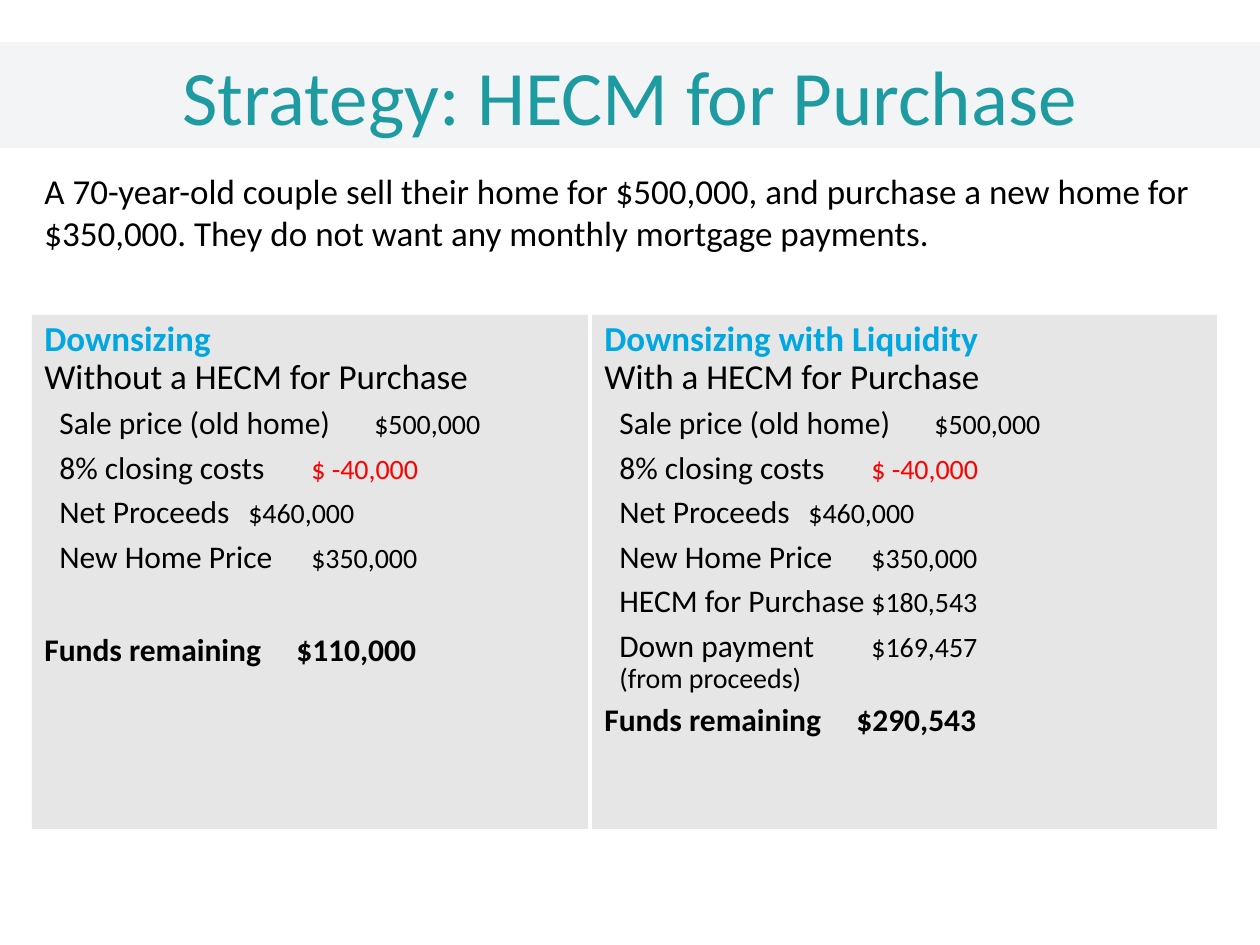
from dataclasses import dataclass

from lxml.etree import SubElement
from pptx import Presentation
from pptx.dml.color import RGBColor as RGB
from pptx.enum.shapes import MSO_SHAPE as Shape
from pptx.enum.text import MSO_ANCHOR as Anchor, MSO_AUTO_SIZE as AutoSize, PP_ALIGN as Align
from pptx.oxml.ns import qn
from pptx.util import Pt

PX = 914400 / 126
INSET = 13  # default side margin of a text frame
INDENT = 15


@dataclass(frozen=True)
class Theme:
    font: str = "Calibri"
    title: RGB = RGB(0x1D, 0x9B, 0xA1)
    banner: RGB = RGB(0xF2, 0xF4, 0xF5)
    panel: RGB = RGB(0xE6, 0xE6, 0xE6)
    heading: RGB = RGB(0x00, 0xA7, 0xE1)
    ink: RGB = RGB(0, 0, 0)
    cost: RGB = RGB(0xFF, 0, 0)
    title_size: int = 44
    lead_size: int = 20
    label_size: int = 18
    amount_size: int = 16


THEME = Theme()

# Each row: label, amount, distance of the amount from the panel's left edge
DOWNSIZING = {
    "heading": "Downsizing",
    "subheading": "Without a HECM for Purchase",
    "rows": [
        ("Sale price (old home)", "$500,000", 311),
        ("8% closing costs", "$ -40,000", 387),
        ("Net Proceeds", "$460,000", 311),
        ("New Home Price", "$350,000", 342),
    ],
    "total": ("$110,000", 349),
    "total_gap": 28,
}
LIQUIDITY = {
    "heading": "Downsizing with Liquidity",
    "subheading": "With a HECM for Purchase",
    "rows": [
        ("Sale price (old home)", "$500,000", 460),
        ("8% closing costs", "$ -40,000", 448),
        ("Net Proceeds", "$460,000", 477),
        ("New Home Price", "$350,000", 477),
        ("HECM for Purchase", "$180,543", 477),
        ("Down payment", "$169,457", 477),
    ],
    "note": "(from proceeds)",
    "total": ("$290,543", 311),
    "total_gap": 0,
}


def emu(px):
    return round(px * PX)


def set_format(target, values):
    for name, value in values.items():
        setattr(target, name, value)


def place(shape, box):
    names = ("left", "top", "width", "height")
    set_format(shape, dict(zip(names, map(emu, box))))


def fill_with(shape, color):
    shape.fill.solid()
    shape.fill.fore_color.rgb = color


def write(paragraph, text, size, color=THEME.ink, bold=False):
    run = paragraph.add_run()
    run.text = text
    set_format(run.font, {"name": THEME.font, "size": Pt(size), "bold": bold})
    run.font.color.rgb = color


def indent_and_tab(paragraph, indent, amount_x):
    """Indent a row and set the tab stop, counted from the indent, for its amount."""
    properties = paragraph._p.get_or_add_pPr()
    properties.set("marL", str(emu(indent)))
    properties.set("indent", "0")
    stops = SubElement(properties, qn("a:tabLst"))
    SubElement(stops, qn("a:tab"), pos=str(emu(amount_x - INSET - indent)), algn="l")


def add_title(slide, box):
    title = slide.shapes.title
    place(title, box)
    fill_with(title, THEME.banner)
    set_format(title.text_frame, {
        "auto_size": AutoSize.NONE, "word_wrap": True, "vertical_anchor": Anchor.MIDDLE,
    })
    heading = title.text_frame.paragraphs[0]
    heading.alignment = Align.CENTER
    write(heading, "Strategy: HECM for Purchase", THEME.title_size, THEME.title)


def add_intro(slide, box):
    intro = slide.shapes.add_textbox(*map(emu, box))
    intro.text_frame.word_wrap = True
    write(
        intro.text_frame.paragraphs[0],
        "A 70-year-old couple sell their home for $500,000, and purchase a new home "
        "for $350,000. They do not want any monthly mortgage payments.",
        THEME.lead_size,
    )


def add_panel(slide, box, scenario):
    panel = slide.shapes.add_shape(Shape.RECTANGLE, *map(emu, box))
    panel.shadow.inherit = False
    panel.line.fill.background()
    fill_with(panel, THEME.panel)
    frame = panel.text_frame
    set_format(frame, {"word_wrap": True, "vertical_anchor": Anchor.TOP})

    def next_line(after=6, before=0):
        line = frame.add_paragraph() if frame.text else frame.paragraphs[0]
        set_format(line, {
            "alignment": Align.LEFT, "line_spacing": 0.9,
            "space_before": Pt(before), "space_after": Pt(after),
        })
        return line

    # Headings
    write(next_line(after=0), scenario["heading"], THEME.lead_size, THEME.heading, True)
    write(next_line(), scenario["subheading"], THEME.lead_size)

    # Price rows
    for label, amount, amount_x in scenario["rows"]:
        row = next_line()
        indent_and_tab(row, INDENT, amount_x)
        write(row, label, THEME.label_size)
        color = THEME.cost if "-" in amount else THEME.ink
        write(row, "\t" + amount, THEME.amount_size, color)
    if "note" in scenario:
        row.add_line_break()
        write(row, scenario["note"], THEME.amount_size)

    # Total
    amount, amount_x = scenario["total"]
    total = next_line(before=scenario["total_gap"])
    indent_and_tab(total, 0, amount_x)
    write(total, "Funds remaining\t" + amount, THEME.label_size, bold=True)


def main():
    deck = Presentation()
    set_format(deck, {"slide_width": emu(1260), "slide_height": emu(945)})
    slide = deck.slides.add_slide(deck.slide_layouts[5])
    add_panel(slide, (32, 315, 556, 514), DOWNSIZING)
    add_panel(slide, (592, 315, 625, 514), LIQUIDITY)
    add_title(slide, (0, 42, 1260, 106))
    add_intro(slide, (32, 163, 1187, 140))
    deck.save("out.pptx")


if __name__ == "__main__":
    main()
